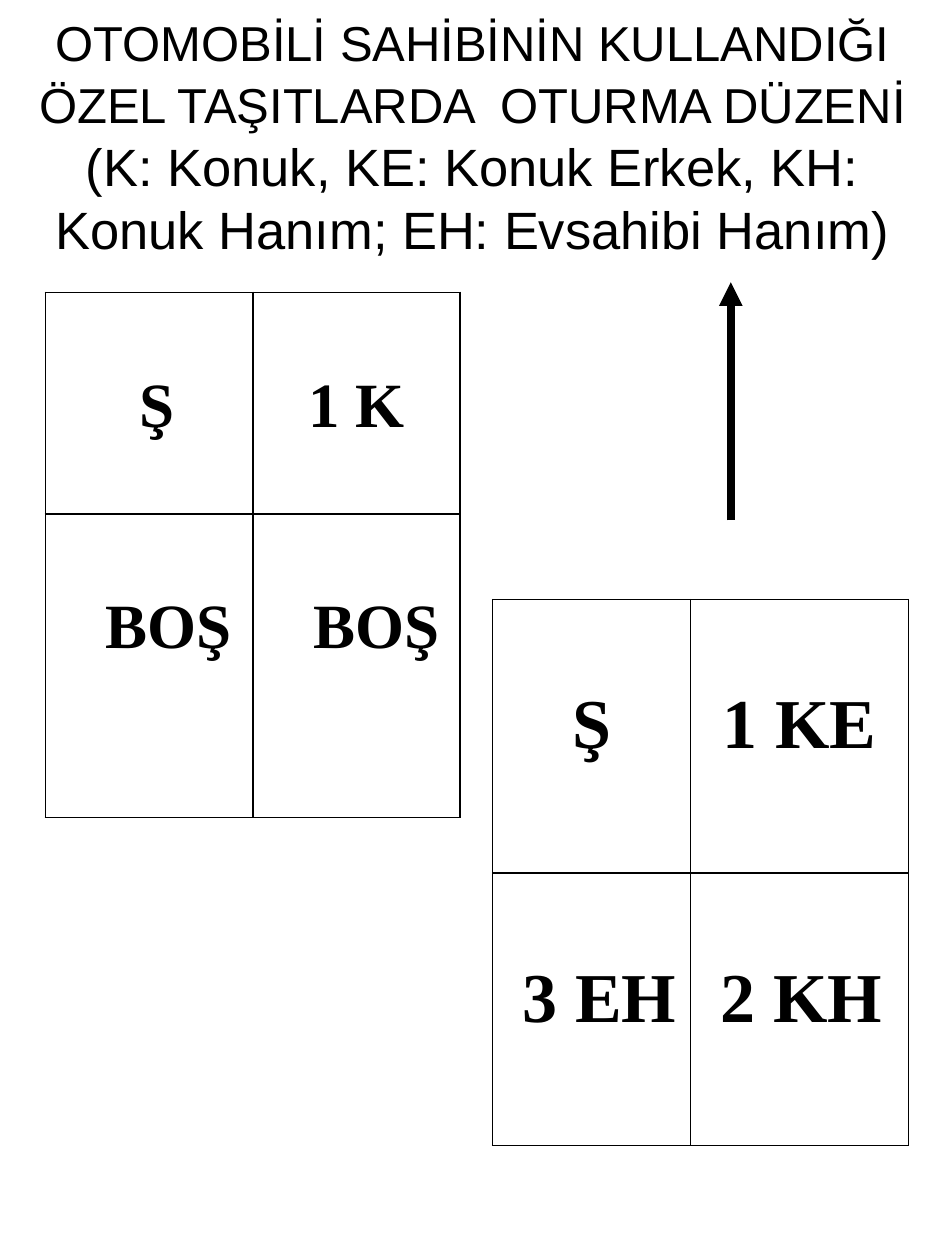
"""Build the slide on seating order in cars driven by their owner."""
from lxml import etree
from pptx import Presentation
from pptx.dml.color import RGBColor
from pptx.enum.shapes import MSO_CONNECTOR
from pptx.enum.text import MSO_ANCHOR, PP_ALIGN
from pptx.oxml.ns import qn
from pptx.util import Inches, Pt

LEFT, CENTER = PP_ALIGN.LEFT, PP_ALIGN.CENTER
MIDDLE, TOP = MSO_ANCHOR.MIDDLE, MSO_ANCHOR.TOP
STRAIGHT = MSO_CONNECTOR.STRAIGHT

COLORS = {"ink": "000000"}
WIDTH, HEIGHT = 7.5, 10
TITLE_HEIGHT = 2.16
LINE_HEIGHT = 1.15
PADDING = 0.05

TITLE = [
    ("OTOMOBİLİ SAHİBİNİN KULLANDIĞI ÖZEL TAŞITLARDA  OTURMA DÜZENİ", 28),
    (" (K: Konuk, KE: Konuk Erkek, KH: Konuk Hanım; EH: Evsahibi Hanım)", 30),
]
CARS = [
    {
        "origin": (0.36, 2.32), "columns": (1.65, 1.64), "rows": (1.76, 2.41), "size": 36,
        "seats": [[("Ş", CENTER, 0.22), ("1 K", CENTER, 0.1)],
                  [("BOŞ", LEFT, 0.48), ("BOŞ", LEFT, 0.48)]],
    },
    {
        "origin": (3.91, 4.76), "columns": (1.57, 1.73), "rows": (2.17, 2.16), "size": 40,
        "seats": [[("Ş", CENTER, 0.1), ("1 KE", CENTER, 0.1)],
                  [("3 EH", LEFT, 0.24), ("2 KH", LEFT, 0.24)]],
    },
]
ARROW = {"x": 5.8, "tail": 4.13, "tip": 2.24, "weight": 4.5}


def apply(target, values):
    for name, value in values.items():
        setattr(target, name, value)


def add_span(para, text, font, size, bold=False):
    span = para.add_run()
    span.text = text
    apply(span.font, {"name": font, "size": Pt(size), "bold": bold})
    span.font.color.rgb = RGBColor.from_string(COLORS["ink"])


def add_title(page):
    box = page.shapes.add_textbox(0, 0, Inches(WIDTH), Inches(TITLE_HEIGHT))
    apply(box.text_frame, {"word_wrap": True, "vertical_anchor": MIDDLE})
    para = box.text_frame.paragraphs[0]
    para.alignment = CENTER
    for text, size in TITLE:
        add_span(para, text, "Arial", size)


def draw_borders(cell):
    properties = cell._tc.get_or_add_tcPr()
    for side in ("lnL", "lnR", "lnT", "lnB"):
        border = etree.SubElement(properties, qn(f"a:{side}"), w=str(Pt(1)))
        fill = etree.SubElement(border, qn("a:solidFill"))
        etree.SubElement(fill, qn("a:srgbClr"), val=COLORS["ink"])


def add_car(page, car):
    lengths = (*car["origin"], sum(car["columns"]), sum(car["rows"]))
    table = page.shapes.add_table(2, 2, *map(Inches, lengths)).table
    apply(table, {"first_row": False, "horz_banding": False})
    for column, width in zip(table.columns, car["columns"]):
        column.width = Inches(width)
    for row, height, seats in zip(table.rows, car["rows"], car["seats"]):
        row.height = Inches(height)
        for cell, (label, alignment, indent) in zip(row.cells, seats):
            draw_borders(cell)
            cell.fill.background()
            apply(cell, {
                "vertical_anchor": TOP,
                "margin_left": Inches(indent),
                "margin_right": Inches(0.1 if alignment == CENTER else PADDING),
                "margin_top": Inches(PADDING) + Pt(car["size"] * LINE_HEIGHT),
            })
            para = cell.text_frame.paragraphs[0]
            para.alignment = alignment
            add_span(para, label, "Times New Roman", car["size"], bold=True)


def add_arrow(page):
    ends = (ARROW["x"], ARROW["tail"], ARROW["x"], ARROW["tip"])
    arrow = page.shapes.add_connector(STRAIGHT, *map(Inches, ends))
    arrow.line.color.rgb = RGBColor.from_string(COLORS["ink"])
    arrow.line.width = Pt(ARROW["weight"])
    etree.SubElement(arrow.line._get_or_add_ln(), qn("a:tailEnd"), type="triangle")
    etree.SubElement(arrow._element.spPr, qn("a:effectLst"))


def main():
    deck = Presentation()
    apply(deck, {"slide_width": Inches(WIDTH), "slide_height": Inches(HEIGHT)})
    page = deck.slides.add_slide(deck.slide_layouts[6])
    add_title(page)
    for car in CARS:
        add_car(page, car)
    add_arrow(page)
    deck.save("out.pptx")


if __name__ == "__main__":
    main()
